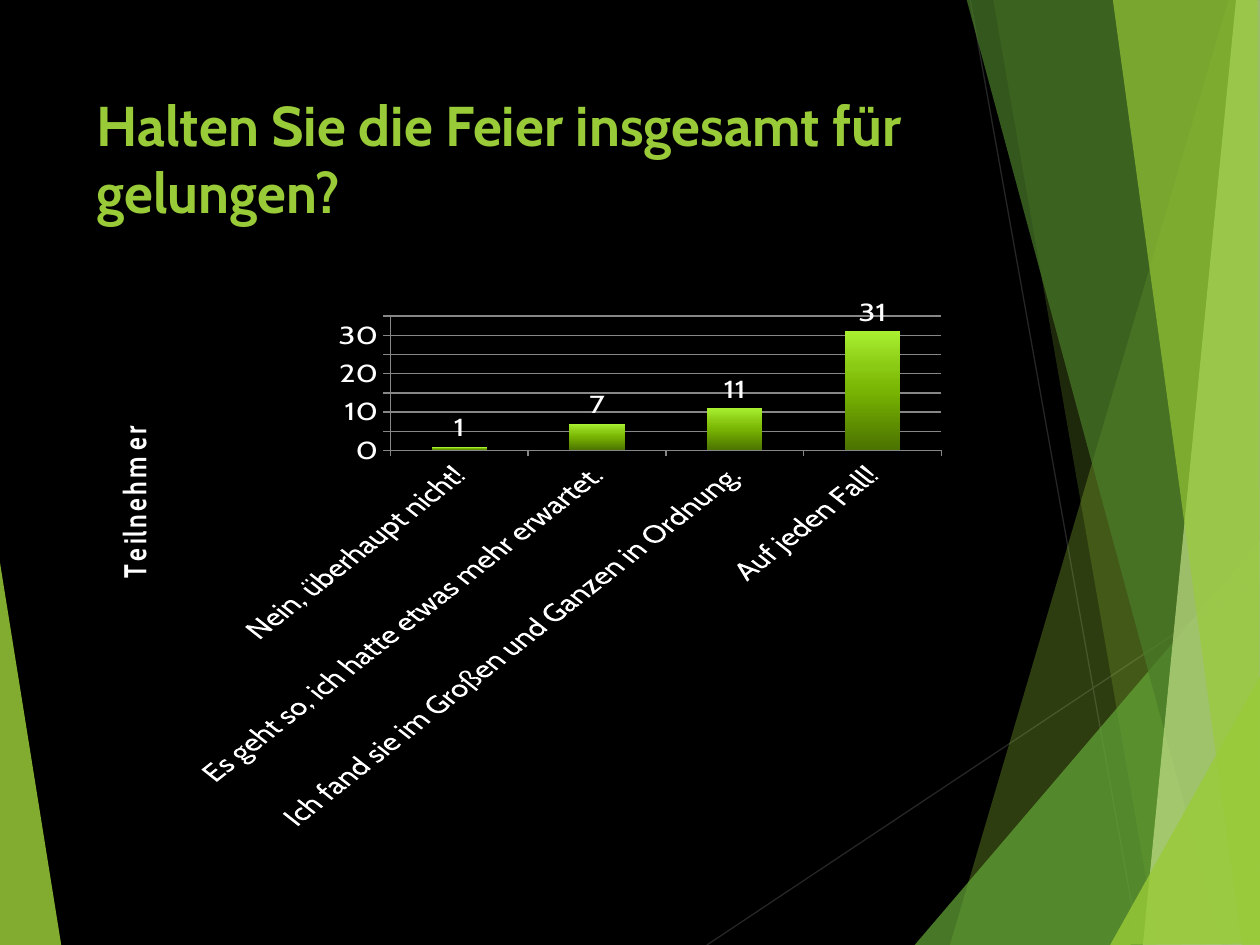
import pptx
import pptx.chart.data
import pptx.dml.color
import pptx.enum.chart
import pptx.enum.text
import pptx.oxml
import pptx.oxml.ns
import pptx.util
from lxml import etree

Cm, Pt, qn = pptx.util.Cm, pptx.util.Pt, pptx.oxml.ns.qn

FONT = "Cabin"
GREEN, WHITE, GREY = "99CB38", "FFFFFF", "878787"
BOTTOM, TOP, RIGHT = 19.05, -0.03, 25.43

RAYS = [((14.25, BOTTOM), (RIGHT, 11.61)), ((19.56, 0), (22.96, BOTTOM))]
FACETS = [
    (GREEN, 85, [(-0.03, 11.15), (1.24, 19.08), (-0.03, BOTTOM)]),
    (GREEN, 30, [(24.77, 0), (19.15, BOTTOM), (25.45, 19.08), (RIGHT, 0.03)]),
    (GREEN, 20, [(20.02, TOP), (23.34, BOTTOM), (RIGHT, BOTTOM), (RIGHT, TOP)]),
    ("63A537", 72, [(18.44, BOTTOM), (25.4, 10.9), (RIGHT, BOTTOM)]),
    ("4A7C29", 70, [(19.48, TOP), (24.64, BOTTOM), (RIGHT, 19.02), (RIGHT, TOP)]),
    ("C2E088", 70, [(24.92, TOP), (23.04, BOTTOM), (RIGHT, BOTTOM), (25.4, TOP)]),
    (GREEN, 65, [(22.43, TOP), (25.04, BOTTOM), (25.4, BOTTOM), (25.35, TOP)]),
    (GREEN, 80, [(22.38, BOTTOM), (RIGHT, 13.59), (RIGHT, 19.02)]),
]
ANSWERS = {
    "Nein, überhaupt nicht!": 1,
    "Es geht so, ich hatte etwas mehr erwartet.": 7,
    "Ich fand sie im Großen und Ganzen in Ordnung.": 11,
    "Auf jeden Fall!": 31,
}
BAR_STOPS = [(0, "4B7200"), (50, "78B403"), (70, "8AC914"), (100, "A8F030")]


def rgb(value):
    return pptx.dml.color.RGBColor.from_string(value)


def paint(fill, color):
    fill.solid()
    fill.fore_color.rgb = rgb(color)


def set_font(font, size, color, bold=False):
    font.name, font.size, font.bold = FONT, Pt(size), bold
    font.color.rgb = rgb(color)


def add_ray(slide, start, end):
    line = slide.shapes.add_connector(1, *map(Cm, start + end))
    line.line.color.rgb = rgb("262626")
    line.line.width = Pt(0.75)
    etree.SubElement(line.element.spPr, qn("a:effectLst"))


def add_facet(slide, color, opacity, points):
    start, *rest = [(Cm(x), Cm(y)) for x, y in points]
    builder = slide.shapes.build_freeform(*start)
    builder.add_line_segments(rest)
    sp = builder.convert_to_shape()
    sp.shadow.inherit = False
    paint(sp.fill, color)
    sp.line.fill.background()
    clr = sp.element.spPr.find(".//" + qn("a:srgbClr"))
    etree.SubElement(clr, qn("a:alpha"), val=str(opacity * 1000))


def add_title(slide, text):
    box = slide.shapes.add_textbox(Cm(1.7), Cm(1.7), Cm(17.63), Cm(3.66))
    tf = box.text_frame
    tf.word_wrap = True
    tf.vertical_anchor = pptx.enum.text.MSO_ANCHOR.TOP
    p = tf.paragraphs[0]
    p.text = text
    set_font(p.font, 32, GREEN, True)


def fill_gradient(series, stops, angle):
    fill = series.format.fill
    fill.gradient()
    fill.gradient_angle = angle
    gs_list = series._element.find(".//" + qn("a:gsLst"))
    gs_list.clear()
    for position, color in stops:
        gs = etree.SubElement(gs_list, qn("a:gs"), pos=str(position * 1000))
        etree.SubElement(gs, qn("a:srgbClr"), val=color)


def style_line(line):
    line.color.rgb = rgb(GREY)
    line.width = Pt(0.75)


def add_answer_chart(slide):
    data = pptx.chart.data.CategoryChartData()
    data.categories = list(ANSWERS)
    data.add_series("Series 1", list(ANSWERS.values()))
    chart = slide.shapes.add_chart(
        pptx.enum.chart.XL_CHART_TYPE.COLUMN_CLUSTERED,
        Cm(1.7), Cm(6), Cm(17.63), Cm(10.77), data).chart
    chart.has_title = chart.has_legend = False
    set_font(chart.font, 18, WHITE)

    plot = chart.plots[0]
    plot.gap_width = 150
    plot.vary_by_categories = False
    fill_gradient(plot.series[0], BAR_STOPS, 90)
    plot.has_data_labels = True
    plot.data_labels.show_value = True
    plot.data_labels.position = pptx.enum.chart.XL_LABEL_POSITION.OUTSIDE_END
    set_font(plot.data_labels.font, 18, WHITE)

    for axis in (chart.category_axis, chart.value_axis):
        axis.major_tick_mark = pptx.enum.chart.XL_TICK_MARK.OUTSIDE
        style_line(axis.format.line)
        set_font(axis.tick_labels.font, 18, WHITE)
    values = chart.value_axis
    values.minimum_scale, values.maximum_scale, values.major_unit = 0, 35, 5
    style_line(values.major_gridlines.format.line)
    p = values.axis_title.text_frame.paragraphs[0]
    p.text = "Teilnehmer"
    set_font(p.font, 18, WHITE, True)


def main():
    """Build the survey slide with its faceted border and column chart."""
    prs = pptx.Presentation()
    prs.slide_width, prs.slide_height = Cm(25.4), Cm(19.05)
    slide = prs.slides.add_slide(prs.slide_layouts[6])
    paint(slide.background.fill, "000000")
    for start, end in RAYS:
        add_ray(slide, start, end)
    for color, opacity, points in FACETS:
        add_facet(slide, color, opacity, points)
    add_title(slide, "Halten Sie die Feier insgesamt für gelungen?")
    add_answer_chart(slide)
    prs.save("out.pptx")


if __name__ == "__main__":
    main()
